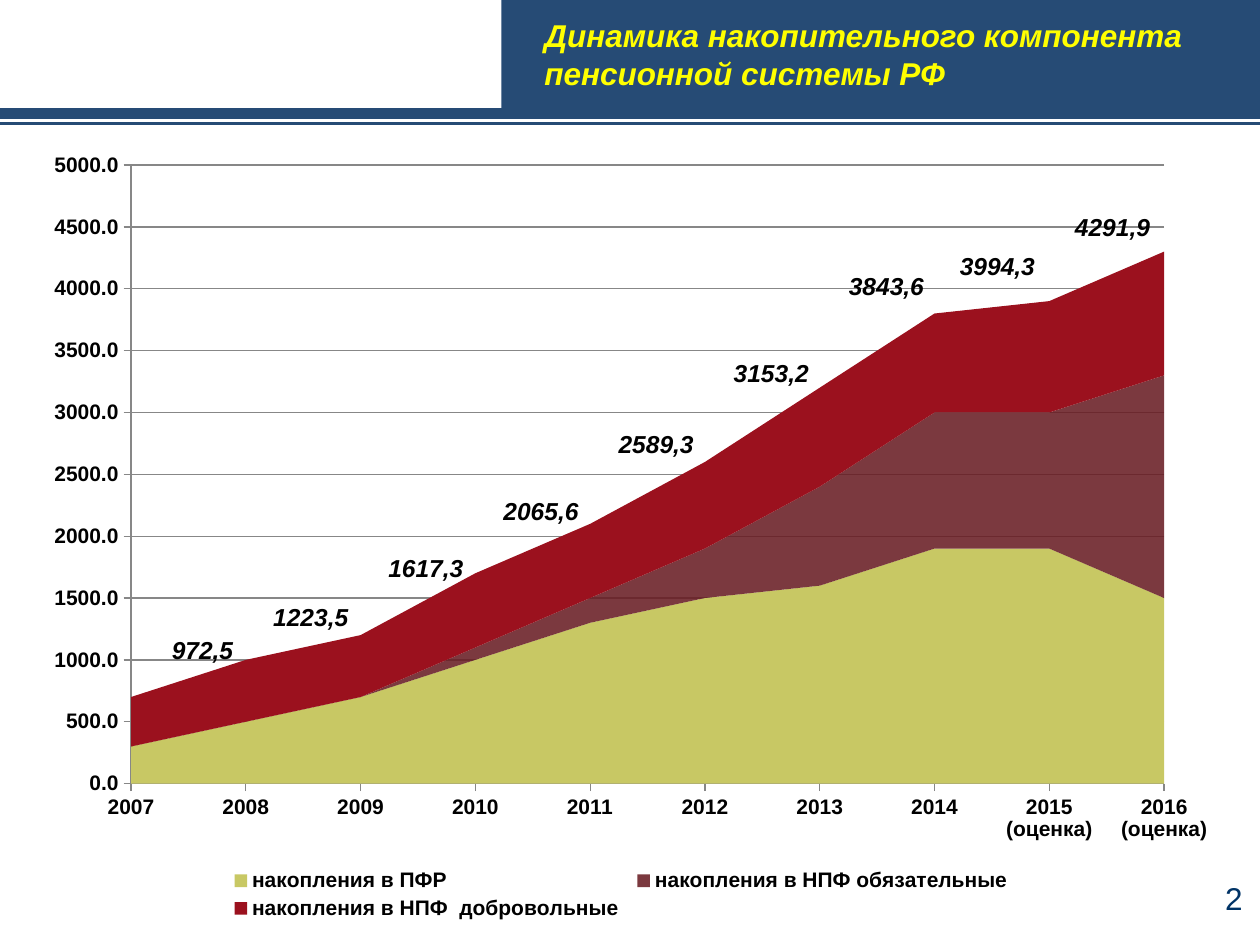
import dataclasses

import lxml.etree
import pptx
import pptx.chart.data
import pptx.dml.color
import pptx.enum.chart
import pptx.enum.shapes
import pptx.enum.text
import pptx.oxml
import pptx.oxml.ns
import pptx.util

WIDTH, HEIGHT = 10, 7.5
NAVY, BLACK, GRAY = "264B75", "000000", "878787"
FONT = "Arial"
FIRST_TOTAL_LEFT, LAST_TOTAL_LEFT = 1.09, 8.4
SAVINGS_FRAME = (0.23, 1.09, 9.53, 6.25)
AREA_FRAME = (1.04, 1.31, 8.2, 4.91)
LEGEND_FRAME = (1.77, 6.86, 6.32, 0.5)


@dataclasses.dataclass(frozen=True)
class Total:
    """A yearly sum, its column on the year grid and its top in inches."""
    text: str
    column: int
    top: float
    align: str = "RIGHT"


@dataclasses.dataclass(frozen=True)
class Fund:
    """One layer of the stacked savings."""
    name: str
    values: tuple
    colour: str
    opacity: int = 100


@dataclasses.dataclass(frozen=True)
class Rule:
    """A full-width header line."""
    top: float
    weight: float


TOTALS = (
    Total("972,5", 0, 4.99),
    Total("1223,5", 1, 4.73),
    Total("1617,3", 2, 4.34),
    Total("2065,6", 3, 3.89),
    Total("2589,3", 4, 3.36),
    Total("3153,2", 5, 2.79),
    Total("3843,6", 6, 2.1),
    Total("3994,3", 7, 1.94, "CENTER"),
    Total("4291,9", 8, 1.63, "CENTER"),
)
FUNDS = (
    Fund("накопления в ПФР",
         (300, 500, 700, 1000, 1300, 1500, 1600, 1900, 1900, 1500), "C8C864"),
    Fund("накопления в НПФ обязательные",
         (0, 0, 0, 100, 200, 400, 800, 1100, 1100, 1800), "681C23", 87),
    Fund("накопления в НПФ  добровольные",
         (400, 500, 500, 600, 600, 700, 800, 800, 900, 1000), "9B111E"),
)
RULES = (Rule(0.9, 6), Rule(0.98, 2.25))
YEARS = [str(year) for year in range(2007, 2015)] + ["2015 (оценка)", "2016 (оценка)"]


def rgb(value: str) -> pptx.dml.color.RGBColor:
    """Turn a hex string into a colour."""
    return pptx.dml.color.RGBColor.from_string(value)


def box(left: float, top: float, width: float, height: float) -> list:
    """Turn a frame in inches into lengths."""
    return [pptx.util.Inches(value) for value in (left, top, width, height)]


def write(shape, text: str, *, size: float, colour: str, align: str = "LEFT",
          bold: bool = False, italic: bool = False) -> None:
    """Write one formatted, wrapped paragraph into a shape."""
    frame = shape.text_frame
    frame.word_wrap = True
    frame.auto_size = pptx.enum.text.MSO_AUTO_SIZE.NONE
    frame.vertical_anchor = pptx.enum.text.MSO_ANCHOR.TOP
    paragraph = frame.paragraphs[0]
    paragraph.alignment = pptx.enum.text.PP_ALIGN[align]
    run = paragraph.add_run()
    run.text = text
    run.font.name, run.font.size = FONT, pptx.util.Pt(size)
    run.font.bold, run.font.italic = bold, italic
    run.font.color.rgb = rgb(colour)


def draw_rule(slide, rule: Rule) -> None:
    """Draw one header line across the slide."""
    top = pptx.util.Inches(rule.top)
    line = slide.shapes.add_connector(
        pptx.enum.shapes.MSO_CONNECTOR.STRAIGHT, 0, top, pptx.util.Inches(WIDTH), top)
    line.line.color.rgb = rgb(NAVY)
    line.line.width = pptx.util.Pt(rule.weight)
    lxml.etree.SubElement(line.element.spPr, pptx.oxml.ns.qn("a:effectLst"))


def draw_header(slide) -> None:
    """Draw the header band, its lines and the title."""
    band = slide.shapes.add_shape(
        pptx.enum.shapes.MSO_SHAPE.RECTANGLE, *box(3.98, 0, WIDTH - 3.98, 0.91))
    band.shadow.inherit = False
    band.fill.solid()
    band.fill.fore_color.rgb = rgb(NAVY)
    band.line.fill.background()
    for rule in RULES:
        draw_rule(slide, rule)
    title = slide.shapes.title
    title.left, title.top, title.width, title.height = box(4.22, 0.08, 5.47, 0.71)
    write(title, "Динамика накопительного компонента пенсионной системы РФ",
          size=18, colour="FFFF00", bold=True, italic=True)
    title.element.getparent().append(title.element)


def manual_layout(frame: tuple, target: str = ""):
    """Build a chart layout that puts a part at a frame on the slide."""
    left, top, width, height = SAVINGS_FRAME
    x, y = (frame[0] - left) / width, (frame[1] - top) / height
    w, h = frame[2] / width, frame[3] / height
    inner = f'<c:layoutTarget val="{target}"/>' if target else ""
    return pptx.oxml.parse_xml(
        f'<c:layout {pptx.oxml.ns.nsdecls("c")}><c:manualLayout>{inner}'
        '<c:xMode val="edge"/><c:yMode val="edge"/>'
        f'<c:x val="{x}"/><c:y val="{y}"/><c:w val="{w}"/><c:h val="{h}"/>'
        '</c:manualLayout></c:layout>')


def place(part, layout) -> None:
    """Give a chart part its manual layout in schema order."""
    qn = pptx.oxml.ns.qn
    for old in part.findall(qn("c:layout")):
        part.remove(old)
    position = part.find(qn("c:legendPos"))
    part.insert(0 if position is None else part.index(position) + 1, layout)


def paint_fund(series, fund: Fund) -> None:
    """Fill one layer with its colour and opacity."""
    series.format.fill.solid()
    series.format.fill.fore_color.rgb = rgb(fund.colour)
    series.format.line.fill.background()
    if fund.opacity < 100:
        colour = next(series.format.fill._xPr.iter(pptx.oxml.ns.qn("a:srgbClr")))
        lxml.etree.SubElement(colour, pptx.oxml.ns.qn("a:alpha"),
                              val=str(fund.opacity * 1000))


def draw_savings(slide) -> None:
    """Draw the stacked area chart of pension savings."""
    data = pptx.chart.data.CategoryChartData(number_format="0.0")
    data.categories = YEARS
    for fund in FUNDS:
        data.add_series(fund.name, fund.values)
    chart = slide.shapes.add_chart(
        pptx.enum.chart.XL_CHART_TYPE.AREA_STACKED, *box(*SAVINGS_FRAME), data).chart
    chart.has_title = False
    chart.font.name, chart.font.size = FONT, pptx.util.Pt(12)
    chart.font.bold = True
    chart.font.color.rgb = rgb(BLACK)
    for series, fund in zip(chart.plots[0].series, FUNDS):
        paint_fund(series, fund)

    amounts, years = chart.value_axis, chart.category_axis
    amounts.minimum_scale, amounts.maximum_scale, amounts.major_unit = 0, 5000, 500
    amounts.has_major_gridlines = True
    amounts.tick_labels.number_format = "0.0"
    amounts.tick_labels.number_format_is_linked = False
    for axis in (amounts, years):
        axis.major_tick_mark = pptx.enum.chart.XL_TICK_MARK.OUTSIDE
        axis.minor_tick_mark = pptx.enum.chart.XL_TICK_MARK.NONE
    for part in (amounts, years, amounts.major_gridlines):
        part.format.line.color.rgb = rgb(GRAY)
        part.format.line.width = pptx.util.Pt(0.75)
    space = chart.element
    for crossing in space.iter(pptx.oxml.ns.qn("c:crossBetween")):
        crossing.set("val", "midCat")

    chart.has_legend = True
    chart.legend.position = pptx.enum.chart.XL_LEGEND_POSITION.BOTTOM
    chart.legend.include_in_layout = False
    place(space.chart.plotArea, manual_layout(AREA_FRAME, "inner"))
    place(space.find(".//" + pptx.oxml.ns.qn("c:legend")), manual_layout(LEGEND_FRAME))


def draw_total(slide, total: Total) -> None:
    """Write one yearly sum above the area."""
    step = (LAST_TOTAL_LEFT - FIRST_TOTAL_LEFT) / (len(TOTALS) - 1)
    left = FIRST_TOTAL_LEFT + total.column * step
    label = slide.shapes.add_textbox(*box(left, total.top, 0.86, 0.34))
    write(label, total.text, size=14, colour=BLACK, align=total.align, bold=True, italic=True)


def main() -> None:
    """Build and save the slide."""
    deck = pptx.Presentation()
    deck.slide_width, deck.slide_height = pptx.util.Inches(WIDTH), pptx.util.Inches(HEIGHT)
    slide = deck.slides.add_slide(deck.slide_layouts[5])
    draw_header(slide)
    page = slide.shapes.add_textbox(*box(9.21, 6.93, 0.75, 0.52))
    write(page, "2", size=18, colour="003366", align="RIGHT")
    draw_savings(slide)
    for total in TOTALS:
        draw_total(slide, total)
    deck.save("out.pptx")


if __name__ == "__main__":
    main()
